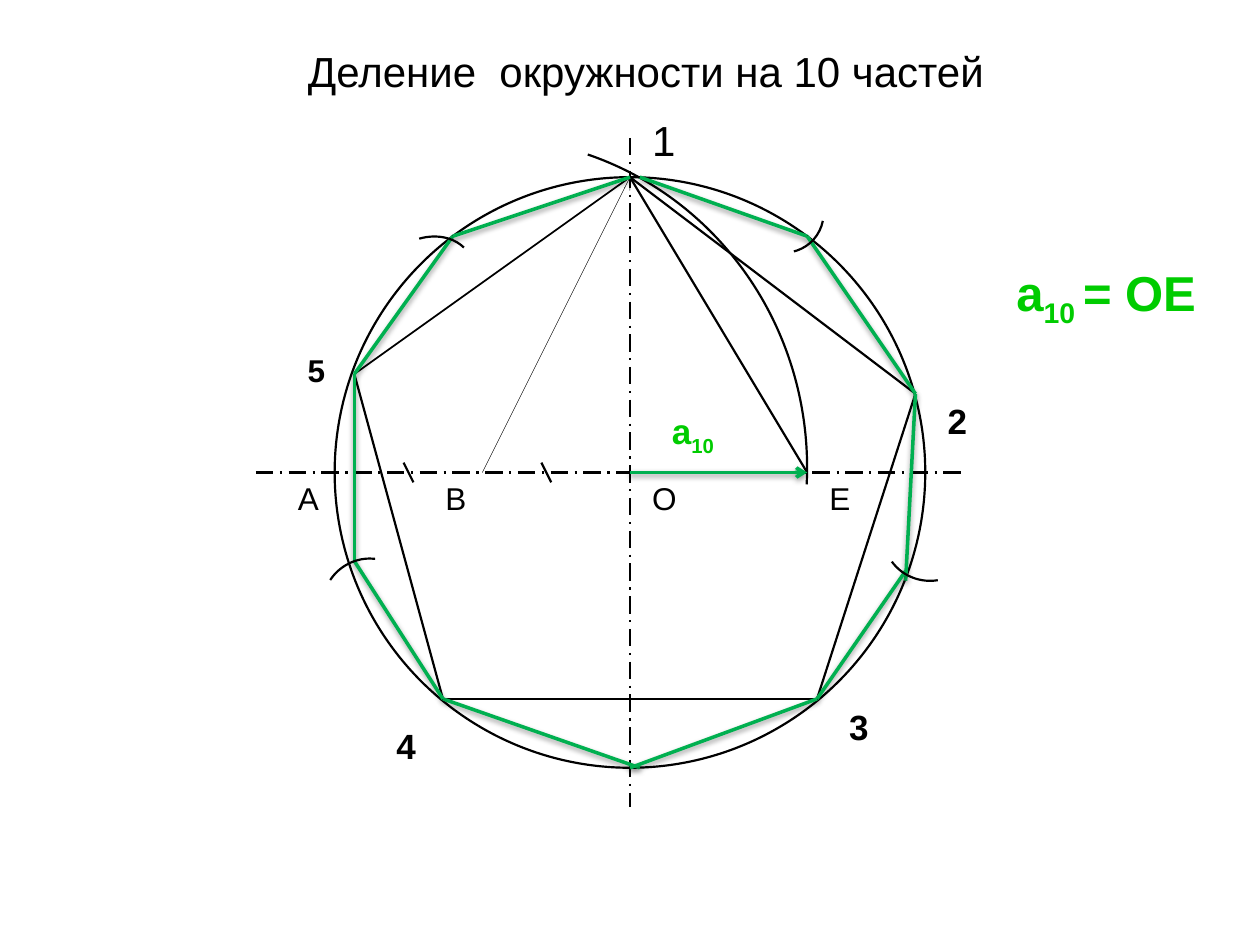
from lxml.etree import SubElement
from pptx import Presentation
from pptx.dml.color import RGBColor
from pptx.enum.dml import MSO_LINE_DASH_STYLE as Dash
from pptx.enum.shapes import MSO_CONNECTOR as Connector, MSO_SHAPE as Shape
from pptx.enum.text import MSO_ANCHOR as Anchor, MSO_AUTO_SIZE as AutoSize, PP_ALIGN as Align
from pptx.oxml.ns import qn
from pptx.util import Pt

BLACK, GREEN, LIME = "000000", "00B050", "00CC00"


def color(hex_value):
    return RGBColor.from_string(hex_value)


class Drawing:
    font = "Arial"
    stroke = 1.25

    def __init__(self, slide):
        self.slide = slide
        self.shapes = slide.shapes

    def set_text(self, box, place, runs, size, ink=BLACK, bold=False, wrap=True):
        """Place a text shape and fill it; runs are (text, is_subscript) pairs."""
        box.left, box.top, box.width, box.height = map(Pt, place)
        frame = box.text_frame
        frame.word_wrap = wrap
        frame.auto_size = AutoSize.SHAPE_TO_FIT_TEXT
        frame.vertical_anchor = Anchor.TOP
        paragraph = frame.paragraphs[0]
        paragraph.alignment = Align.LEFT
        for text, is_subscript in runs:
            run = paragraph.add_run()
            run.text = text
            run.font.name = self.font
            run.font.size = Pt(size)
            run.font.bold = bold
            run.font.color.rgb = color(ink)
            if is_subscript:
                run.font._element.set("baseline", "-25000")

    def title(self, text, place, size):
        self.set_text(self.shapes.title, place, [(text, False)], size)

    def label(self, runs, place, size, **style):
        box = self.shapes.add_textbox(*map(Pt, place))
        self.set_text(box, place, runs, size, **style)

    def line(self, start, end, ink=BLACK, width=stroke, dash=None, arrow=False, shadow=False):
        segment = self.shapes.add_connector(Connector.STRAIGHT, *map(Pt, start + end))
        segment.line.color.rgb = color(ink)
        segment.line.width = Pt(width)
        if dash:
            segment.line.dash_style = dash
        properties = segment._element.spPr
        if arrow:
            SubElement(properties.find(qn("a:ln")), qn("a:tailEnd"), type="arrow")
        effects = SubElement(properties, qn("a:effectLst"))
        if shadow:
            outer = SubElement(effects, qn("a:outerShdw"), blurRad="40000", dist="20000",
                               dir="5400000", rotWithShape="0")
            shade = SubElement(outer, qn("a:srgbClr"), val=BLACK)
            SubElement(shade, qn("a:alpha"), val="38000")

    def outline(self, kind, place):
        shape = self.shapes.add_shape(kind, *map(Pt, place))
        shape.shadow.inherit = False
        shape.fill.background()
        shape.line.color.rgb = color(BLACK)
        shape.line.width = Pt(self.stroke)
        return shape

    def arc(self, place, start, end, rotation=0):
        """Draw an arc between two angles in degrees."""
        arc = self.outline(Shape.ARC, place)
        for index, angle in enumerate((start, end)):
            arc.adjustments[index] = angle * 0.6  # 60000 units a degree, stored per 100000
        arc.rotation = rotation


def main():
    deck = Presentation()
    deck.slide_width, deck.slide_height = Pt(720), Pt(540)
    drawing = Drawing(deck.slides.add_slide(deck.slide_layouts[5]))

    center_x, center_y, radius = 360, 270, 168.75
    center = (center_x, center_y)
    bottom = (center_x, center_y + radius)
    p1, p2, p3 = (center_x, center_y - radius), (523.12, 225), (466.88, 399.38)
    p4, p5 = (253.12, 399.38), (202.5, 213.75)
    point_b, point_e = (center_x - radius / 2, center_y), (461.25, center_y)

    drawing.title("Деление  окружности на 10 частей", (168.75, 22.5, 427.5, 36), 24)
    drawing.outline(Shape.OVAL, (center_x - radius, center_y - radius, 2 * radius, 2 * radius))
    drawing.line((center_x, 78.75), (center_x, 461.25), dash=Dash.LONG_DASH_DOT)
    drawing.line((146.25, center_y), (551.25, center_y), dash=Dash.LONG_DASH_DOT)

    # Finding E, with equal-length ticks on the halves of the radius
    drawing.arc((95.62, 78.75, 365.62, 376.88), 287.82, 3.03)
    drawing.line(p1, point_e)
    drawing.line(point_b, p1, width=0.25, arrow=True)
    for tick_x in (230.62, 309.38):
        drawing.line((tick_x, 264.38), (tick_x + 5.62, 275.62))

    # Pentagon
    for start, end, width in ((p1, p2, 1.25), (p1, p5, 1), (p5, p4, 1.25),
                              (p2, p3, 1.25), (p4, p3, 1.25)):
        drawing.line(start, end, width=width)

    # Decagon sides and the length that sets them
    right_top, left_top, left_low = (461.25, 135), (258.75, 135), (202.5, 320.62)
    sides = (
        ((365.62, p1[1]), right_top), (right_top, p2),
        (p5, left_top), (left_top, p1),
        (p4, (365.62, bottom[1])), (p5, left_low), (left_low, p4),
        (p2, (517.5, 331.88)), (p3, (517.5, 326.25)), (bottom, p3),
    )
    drawing.line(center, point_e, GREEN, 2, arrow=True, shadow=True)
    for start, end in sides:
        drawing.line(start, end, GREEN, 2, shadow=True)

    # Compass marks
    for place, start, end, rotation in (
        ((425.6, 99.4, 45, 45), 270, 334.5, 101.2),
        ((504.7, 279.4, 54, 52.5), 270, 334.5, 170.8),
        ((183.6, 319.7, 54, 52.5), 270, 334.5, 303.6),
        ((211, 137.5, 62.6, 50.4), 300.94, 353.89, 323.2),
    ):
        drawing.arc(place, start, end, rotation)

    for name, left, top, size, bold in (
        ("1", 365.62, 61.88, 24, False), ("2", 534.38, 225, 20, True),
        ("3", 478.12, 399.38, 20, True), ("4", 219.38, 410.62, 20, True),
        ("5", 168.75, 196.88, 18, True), ("О", 365.62, center_y, 18, False),
        ("А", 163.12, center_y, 18, False), ("В", 247.5, center_y, 18, False),
        ("Е", 466.88, center_y, 18, False),
    ):
        drawing.label([(name, False)], (left, top, 28, size * 1.2 + 7.2), size, bold=bold)

    side_length = {"ink": LIME, "bold": True, "wrap": False}
    drawing.label([("а", False), ("10 ", True), ("= ОЕ", False)],
                  (573.75, 146.25, 121.5, 41), 28, **side_length)
    drawing.label([("а", False), ("10", True)], (376.88, 230.62, 44.6, 31.5), 20, **side_length)

    deck.save("out.pptx")


if __name__ == "__main__":
    main()
